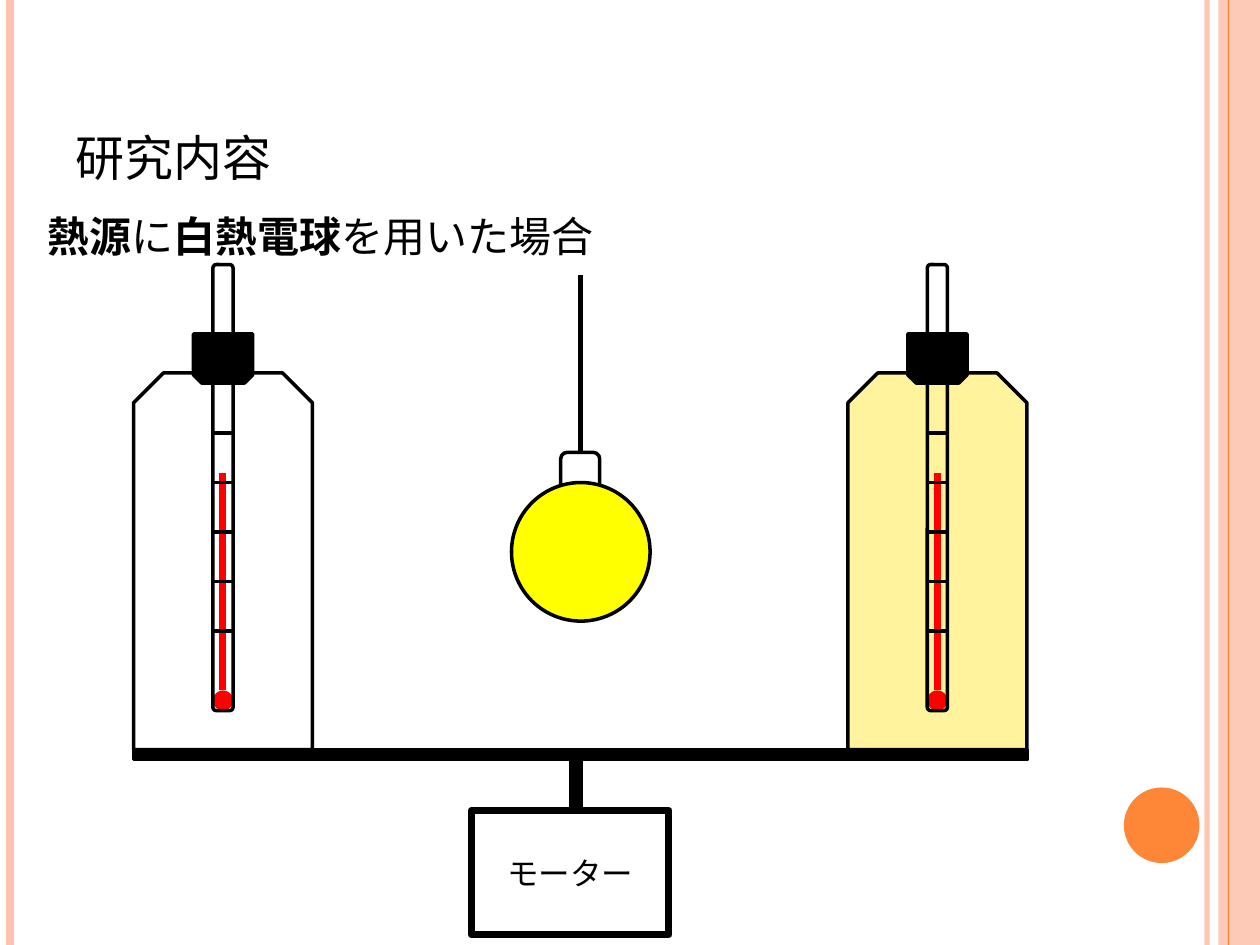
from dataclasses import dataclass
from lxml import etree
from pptx import Presentation
from pptx.dml.color import RGBColor
from pptx.enum.shapes import MSO_CONNECTOR, MSO_SHAPE
from pptx.enum.text import MSO_ANCHOR, MSO_AUTO_SIZE, PP_ALIGN
from pptx.oxml.ns import qn
from pptx.slide import Slide
from pptx.util import Inches, Pt

STRAIGHT = MSO_CONNECTOR.STRAIGHT
RECTANGLE = MSO_SHAPE.RECTANGLE
OVAL = MSO_SHAPE.OVAL
ROUNDED = MSO_SHAPE.ROUNDED_RECTANGLE
ROUND_TOP = MSO_SHAPE.ROUND_2_SAME_RECTANGLE
SNIPPED_TOP = MSO_SHAPE.SNIP_2_SAME_RECTANGLE
TOP, MIDDLE, BOTTOM = MSO_ANCHOR.TOP, MSO_ANCHOR.MIDDLE, MSO_ANCHOR.BOTTOM
LEFT, CENTER = PP_ALIGN.LEFT, PP_ALIGN.CENTER
FIT_SHAPE = MSO_AUTO_SIZE.SHAPE_TO_FIT_TEXT

BLACK, WHITE, RED, YELLOW = "000000", "FFFFFF", "FF0000", "FFFF00"
PINK, ORANGE, CREAM = "FEC3AE", "FE8637", "FFF39D"


def paint(color_format, color, opacity=100):
    """Set a solid fill's colour and its opacity in percent."""
    color_format.solid()
    color_format.fore_color.rgb = RGBColor.from_string(color)
    if opacity < 100:
        element = color_format._xPr.find(qn("a:solidFill"))[0]
        etree.SubElement(element, qn("a:alpha")).set("val", str(opacity * 1000))


def write(frame, runs, size, font, color=BLACK, align=LEFT, anchor=TOP, small_caps=False):
    """Write one paragraph from (text, bold) pairs."""
    frame.word_wrap = True
    frame.vertical_anchor = anchor
    paragraph = frame.paragraphs[0]
    paragraph.alignment = align
    for text, bold in runs:
        run = paragraph.add_run()
        run.text = text
        run.font.size = Pt(size)
        run.font.name = font
        run.font.bold = bold
        run.font.color.rgb = RGBColor.from_string(color)
        if small_caps:
            run._r.get_or_add_rPr().set("cap", "small")


@dataclass
class Drawing:
    """Hold the slide and the style shared by its elements."""
    slide: Slide
    font: str = "TeX Gyre Schola"
    outline: float = 2

    def shape(self, kind, left, top, width, height, fill=None, line=BLACK,
              weight=None, opacity=100, rotation=0):
        """Add a preset shape."""
        shape = self.slide.shapes.add_shape(
            kind, Inches(left), Inches(top), Inches(width), Inches(height))
        shape.shadow.inherit = False
        shape.rotation = rotation
        if fill:
            paint(shape.fill, fill, opacity)
        else:
            shape.fill.background()
        if line:
            paint(shape.line.fill, line)
            shape.line.width = Pt(weight or self.outline)
        else:
            shape.line.fill.background()
        return shape

    def line(self, x1, y1, x2, y2, color=BLACK, weight=None, opacity=100):
        """Add a straight connector."""
        connector = self.slide.shapes.add_connector(
            STRAIGHT, Inches(x1), Inches(y1), Inches(x2), Inches(y2))
        paint(connector.line.fill, color, opacity)
        connector.line.width = Pt(weight or self.outline)
        etree.SubElement(connector._element.spPr, qn("a:effectLst"))
        return connector

    def text(self, left, top, width, height, runs, size, fit=False, **style):
        """Add a text box."""
        box = self.slide.shapes.add_textbox(
            Inches(left), Inches(top), Inches(width), Inches(height))
        write(box.text_frame, runs, size, self.font, **style)
        if fit:
            box.text_frame.auto_size = FIT_SHAPE

    def bottle(self, left, fill):
        """Add a stoppered bottle with a thermometer inside."""
        center = left + 0.71
        tube_left, tube_right = center - 0.08, center + 0.08
        self.shape(SNIPPED_TOP, left, 2.96, 1.42, 2.99, fill)
        self.shape(OVAL, tube_left, 5.48, 0.16, 0.16, RED, line=None)
        self.line(center, 5.48, center, 3.75, RED, 4)
        self.shape(ROUNDED, tube_left, 2.1, 0.16, 3.54)
        for step in range(7):
            height = 5.01 - step * 0.3937
            self.line(tube_left, height, tube_right, height)
        self.shape(SNIPPED_TOP, center - 0.235, 2.65, 0.47, 0.39, BLACK, rotation=180)

    def frame(self):
        """Add the stripes and the disc at the slide's edges."""
        self.line(9.58, 0, 9.58, 7.5, PINK, 3, 93)
        self.line(0.08, 0, 0.08, 7.5, PINK, 4.5)
        self.line(9.75, 0, 9.75, 7.5, ORANGE, 1.5)
        self.shape(RECTANGLE, 9.67, 0, 0.33, 7.5, PINK, line=None, opacity=87)
        self.line(9.75, 0, 9.75, 7.5, ORANGE, 0.75)
        self.shape(OVAL, 8.92, 6.25, 0.6, 0.6, ORANGE, line=None)

    def turntable(self):
        """Add the rotating arm, its axle and the motor."""
        self.shape(RECTANGLE, 1.06, 5.95, 7.09, 0.08, BLACK)
        self.shape(RECTANGLE, 4.53, 5.95, 0.08, 0.47, BLACK)
        motor = self.shape(RECTANGLE, 3.74, 6.43, 1.57, 0.99, weight=4)
        write(motor.text_frame, [("モーター", False)], 18, self.font,
              align=CENTER, anchor=MIDDLE)

    def lamp(self):
        """Add the hanging light bulb."""
        self.shape(ROUND_TOP, 4.45, 3.59, 0.31, 0.31, WHITE)
        self.shape(OVAL, 4.06, 3.83, 1.1, 1.1, YELLOW)
        self.line(4.61, 3.59, 4.61, 2.18, weight=3)


def main():
    """Build and save the slide."""
    presentation = Presentation()
    presentation.slide_width = Inches(10)
    presentation.slide_height = Inches(7.5)
    drawing = Drawing(presentation.slides.add_slide(presentation.slide_layouts[6]))
    drawing.frame()
    drawing.text(0.5, 0.3, 8.17, 1.25, [("研究内容", False)], 35,
                 anchor=BOTTOM, small_caps=True)
    heading = [("熱源", True), ("に", False), ("白熱電球", True), ("を用いた場合", False)]
    drawing.text(0.28, 1.62, 4.57, 0.5, heading, 24, fit=True)
    for left, fill in ((6.73, CREAM), (1.06, WHITE)):
        drawing.bottle(left, fill)
    drawing.turntable()
    drawing.lamp()
    presentation.save("out.pptx")


if __name__ == "__main__":
    main()
